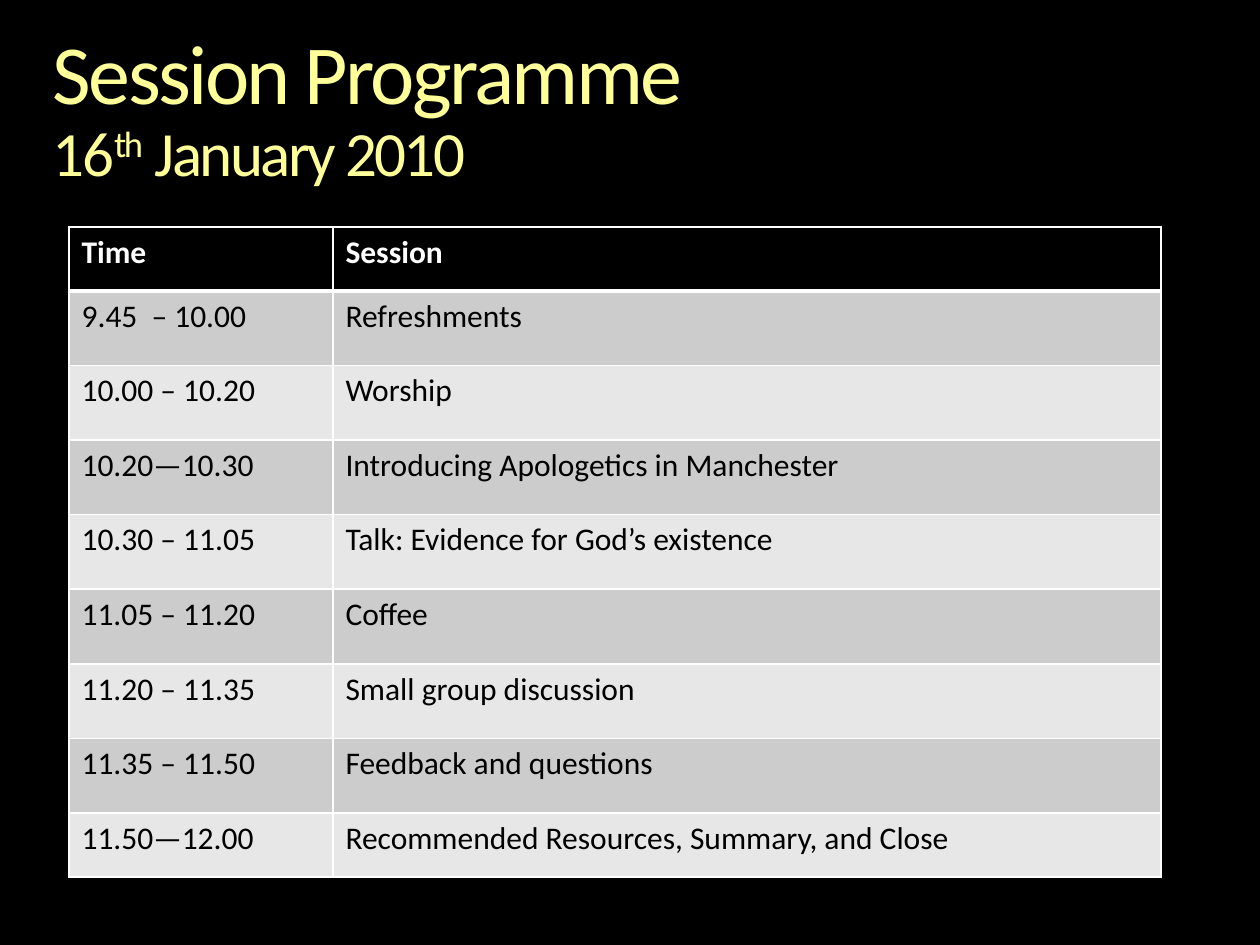
from dataclasses import dataclass

from lxml.etree import SubElement
from pptx import Presentation
from pptx.dml.color import RGBColor
from pptx.enum.text import MSO_ANCHOR, MSO_AUTO_SIZE, PP_ALIGN
from pptx.oxml.ns import qn
from pptx.util import Emu, Pt


@dataclass(frozen=True)
class Theme:
    font: str = "Calibri"
    background: str = "000000"
    title: str = "FFFF99"
    title_gradient: tuple = ((0, "FFFFB9"), (36, "FFFF99"), (86, "F6AE1E"))
    header_fill: str = "000000"
    header_text: str = "FFFFFF"
    body_text: str = "000000"
    bands: tuple = ("CCCCCC", "E7E7E7")
    border: str = "FFFFFF"
    title_size: int = 48
    date_size: int = 36
    table_size: int = 18
    thin: int = 1
    thick: int = 3


THEME = Theme()
PX_PER_INCH = 126
PROGRAMME = [
    ("Time", "Session"),
    ("9.45  – 10.00", "Refreshments"),
    ("10.00 – 10.20", "Worship"),
    ("10.20—10.30", "Introducing Apologetics in Manchester"),
    ("10.30 – 11.05", "Talk: Evidence for God’s existence"),
    ("11.05 – 11.20", "Coffee"),
    ("11.20 – 11.35", "Small group discussion"),
    ("11.35 – 11.50", "Feedback and questions"),
    ("11.50—12.00", "Recommended Resources, Summary, and Close"),
]
COLUMN_WIDTHS = (264, 828)
OUTER_ROW_HEIGHT = 64
INNER_ROWS_HEIGHT = 522


def px(length):
    return Emu(round(length * 914400 / PX_PER_INCH))


def add_span(para, text, size, color, bold=False):
    span = para.add_run()
    span.text = text
    span.font.name = THEME.font
    span.font.size = Pt(size)
    span.font.bold = bold
    span.font.color.rgb = RGBColor.from_string(color)
    return span


def add_title_span(para, text, size, baseline=0):
    """Add a tightly spaced run, raised by baseline percent."""
    span = add_span(para, text, size, THEME.title)
    properties = span.font._element
    properties.set("spc", "-150")
    properties.set("baseline", str(baseline * 1000))
    return span


def apply_gradient(span, stops):
    """Fill the run's letters with a vertical gradient."""
    span.font.fill.gradient()
    span.font.fill.gradient_angle = 270
    stop_list = span.font._element.find(qn("a:gradFill")).find(qn("a:gsLst"))
    for stop in list(stop_list):
        stop_list.remove(stop)
    for position, color in stops:
        stop = SubElement(stop_list, qn("a:gs"), pos=str(position * 1000))
        SubElement(stop, qn("a:srgbClr"), val=color)


def fill_title(title):
    title.left, title.top, title.width, title.height = map(px, (53, 31, 1155, 160))
    frame = title.text_frame
    frame.margin_left = frame.margin_top = 0
    frame.margin_right = frame.margin_bottom = 0
    frame.word_wrap = True
    frame.auto_size = MSO_AUTO_SIZE.NONE
    frame.vertical_anchor = MSO_ANCHOR.MIDDLE
    para = frame.paragraphs[0]
    para.alignment = PP_ALIGN.LEFT
    para.line_spacing = 0.9
    heading = add_title_span(para, "Session Programme", THEME.title_size)
    apply_gradient(heading, THEME.title_gradient)
    para.add_line_break()
    add_title_span(para, "16", THEME.date_size)
    add_title_span(para, "th", THEME.date_size, baseline=30)
    add_title_span(para, " January 2010", THEME.date_size)


def set_borders(cell, top, bottom):
    properties = cell._tc.get_or_add_tcPr()
    widths = {"L": THEME.thin, "R": THEME.thin, "T": top, "B": bottom}
    for side, width in widths.items():
        line = SubElement(properties, qn(f"a:ln{side}"), w=str(Pt(width)))
        fill = SubElement(line, qn("a:solidFill"))
        SubElement(fill, qn("a:srgbClr"), val=THEME.border)


def fill_cell(cell, text, row):
    is_header = row == 0
    set_borders(
        cell,
        top=THEME.thick if row == 1 else THEME.thin,
        bottom=THEME.thick if is_header else THEME.thin,
    )
    fill = THEME.header_fill if is_header else THEME.bands[(row - 1) % 2]
    cell.fill.solid()
    cell.fill.fore_color.rgb = RGBColor.from_string(fill)
    color = THEME.header_text if is_header else THEME.body_text
    add_span(cell.text_frame.paragraphs[0], text, THEME.table_size, color, is_header)


def add_programme(slide):
    last = len(PROGRAMME) - 1
    frame = slide.shapes.add_table(
        len(PROGRAMME), len(COLUMN_WIDTHS), px(69), px(227),
        px(sum(COLUMN_WIDTHS)), px(2 * OUTER_ROW_HEIGHT + INNER_ROWS_HEIGHT),
    )
    table = frame.table
    for column, width in zip(table.columns, COLUMN_WIDTHS):
        column.width = px(width)
    for row, texts in enumerate(PROGRAMME):
        is_outer = row in (0, last)
        height = px(OUTER_ROW_HEIGHT) if is_outer else px(INNER_ROWS_HEIGHT) // (last - 1)
        table.rows[row].height = height
        for column, text in enumerate(texts):
            fill_cell(table.cell(row, column), text, row)


def main():
    deck = Presentation()
    deck.slide_width, deck.slide_height = px(1260), px(945)
    slide = deck.slides.add_slide(deck.slide_layouts[5])
    slide.background.fill.solid()
    slide.background.fill.fore_color.rgb = RGBColor.from_string(THEME.background)
    fill_title(slide.shapes.title)
    add_programme(slide)
    deck.save("out.pptx")


if __name__ == "__main__":
    main()
